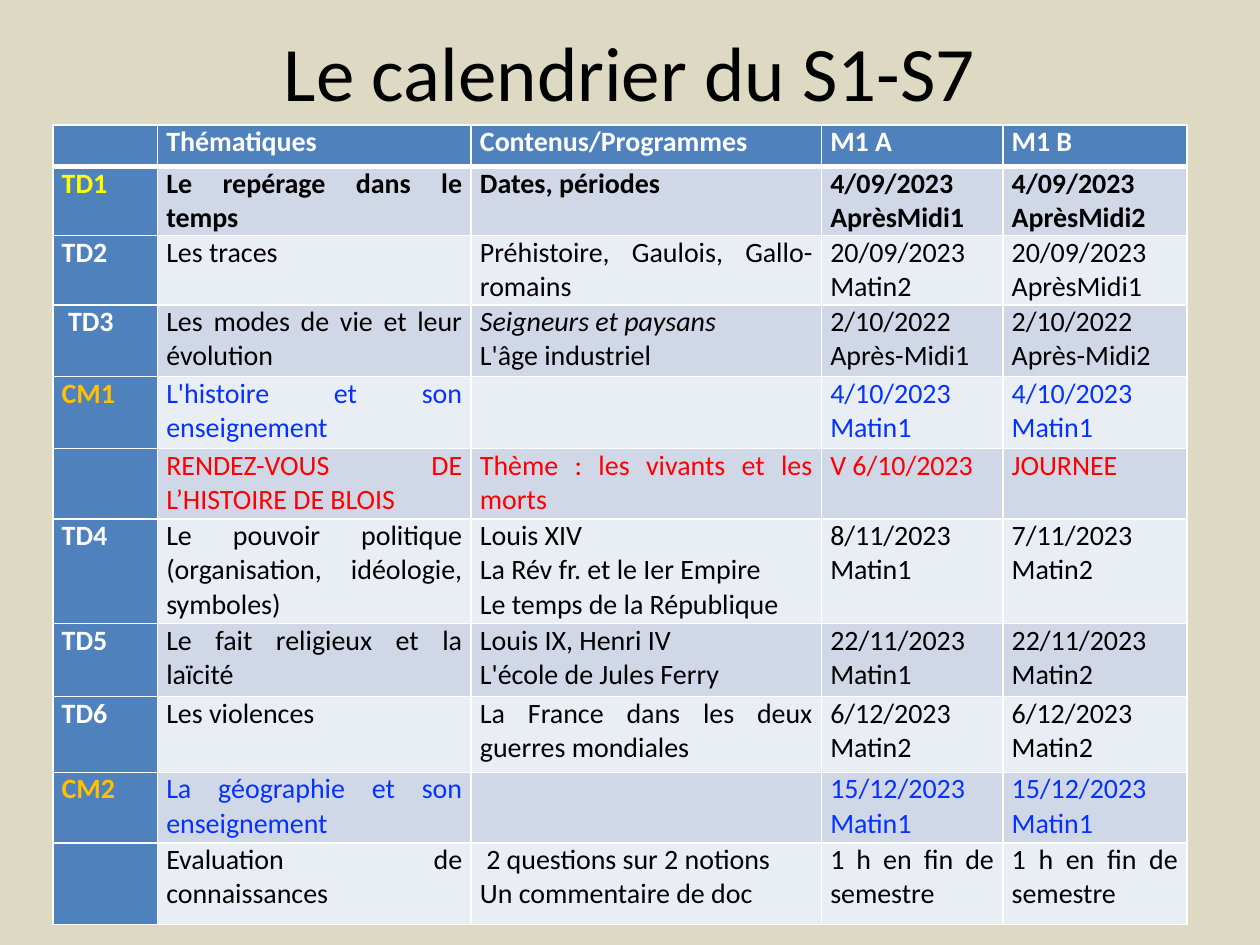
from lxml.etree import SubElement
from pptx import Presentation
from pptx.dml.color import RGBColor
from pptx.enum.text import MSO_ANCHOR, PP_ALIGN
from pptx.oxml.ns import qn
from pptx.util import Inches, Pt

FONT = "Calibri"
WHITE, BLACK, BLUE, RED = "FFFFFF", "000000", "0432FF", "FF0000"
YELLOW, ORANGE = "FFFF00", "FFC000"
HEADER_FILL, BANDS = "4F81BD", ("D0D8E8", "E9EDF4")

COLUMN_WIDTHS = (0.83, 2.49, 2.78, 1.44, 1.46)
ROW_HEIGHTS = (0.33, 0.55, 0.55, 0.57, 0.57, 0.56, 0.83, 0.58, 0.6, 0.56, 0.65)
HEADINGS = ("", "Thématiques", "Contenus/Programmes", "M1 A", "M1 B")
# Label colour, text colour, then the five cells of the row
SESSIONS = (
    (YELLOW, BLACK, "TD1", "Le repérage dans le temps", "Dates, périodes",
     "4/09/2023\nAprèsMidi1", "4/09/2023\nAprèsMidi2"),
    (WHITE, BLACK, "TD2", "Les traces", "Préhistoire, Gaulois, Gallo-romains",
     "20/09/2023\nMatin2", "20/09/2023\nAprèsMidi1"),
    (WHITE, BLACK, " TD3", "Les modes de vie et leur évolution",
     "Seigneurs et paysans\nL'âge industriel",
     "2/10/2022\nAprès-Midi1", "2/10/2022\nAprès-Midi2"),
    (ORANGE, BLUE, "CM1", "L'histoire et son enseignement", "",
     "4/10/2023\nMatin1", "4/10/2023\nMatin1"),
    (WHITE, RED, "", "RENDEZ-VOUS DE L’HISTOIRE DE BLOIS",
     "Thème : les vivants et les morts", "V 6/10/2023", "JOURNEE"),
    (WHITE, BLACK, "TD4", "Le pouvoir politique (organisation, idéologie, symboles)",
     "Louis XIV\nLa Rév fr. et le Ier Empire\nLe temps de la République",
     "8/11/2023\nMatin1", "7/11/2023\nMatin2"),
    (WHITE, BLACK, "TD5", "Le fait religieux et la laïcité",
     "Louis IX, Henri IV\nL'école de Jules Ferry",
     "22/11/2023\nMatin1", "22/11/2023\nMatin2"),
    (WHITE, BLACK, "TD6", "Les violences", "La France dans les deux guerres mondiales",
     "6/12/2023\nMatin2", "6/12/2023\nMatin2"),
    (ORANGE, BLUE, "CM2", "La géographie et son enseignement", "",
     "15/12/2023\nMatin1", "15/12/2023\nMatin1"),
    (WHITE, BLACK, "", "Evaluation de connaissances",
     " 2 questions sur 2 notions\nUn commentaire de doc",
     "1 h en fin de semestre", "1 h en fin de semestre"),
)
BOLD_SESSION = "TD1"
ITALIC_LINE = "Seigneurs et paysans"


def rgb(value):
    return RGBColor.from_string(value)


def format_paragraph(paragraph, size, color, alignment, bold=False):
    paragraph.alignment = alignment
    for run in paragraph.runs:
        font = run.font
        font.name, font.size, font.bold = FONT, Pt(size), bold
        font.italic = run.text == ITALIC_LINE
        font.color.rgb = rgb(color)
    if not paragraph.runs:
        # An empty cell keeps the text size, so its row does not grow
        SubElement(paragraph._p, qn("a:endParaRPr"), sz=str(size * 100))


def add_borders(cell, top, bottom):
    """Draw white borders; top and bottom are widths in points."""
    properties = cell._tc.get_or_add_tcPr()
    for side, width in (("L", 1), ("R", 1), ("T", top), ("B", bottom)):
        line = SubElement(properties, qn(f"a:ln{side}"), w=str(Pt(width)))
        fill = SubElement(line, qn("a:solidFill"))
        SubElement(fill, qn("a:srgbClr"), val=WHITE)


def fill_cell(cell, text, color, fill, bold, top=1, bottom=1):
    cell.margin_left = cell.margin_right = Inches(0.07)
    cell.margin_top = cell.margin_bottom = 0
    add_borders(cell, top, bottom)
    cell.fill.solid()
    cell.fill.fore_color.rgb = rgb(fill)
    cell.text_frame.text = text
    for paragraph in cell.text_frame.paragraphs:
        format_paragraph(paragraph, 16, color, PP_ALIGN.JUSTIFY, bold)


def set_title(slide, text):
    title = slide.shapes.title
    title.left, title.top = Inches(0.5), 0
    title.width, title.height = Inches(9), Inches(1.12)
    title.text_frame.text = text
    title.text_frame.vertical_anchor = MSO_ANCHOR.MIDDLE
    format_paragraph(title.text_frame.paragraphs[0], 44, BLACK, PP_ALIGN.CENTER)


def add_calendar(slide):
    table = slide.shapes.add_table(
        len(ROW_HEIGHTS), len(COLUMN_WIDTHS), Inches(0.42), Inches(0.99),
        Inches(sum(COLUMN_WIDTHS)), Inches(sum(ROW_HEIGHTS))).table
    table.first_col = True
    for column, width in zip(table.columns, COLUMN_WIDTHS):
        column.width = Inches(width)
    for row, height in zip(table.rows, ROW_HEIGHTS):
        row.height = Inches(height)

    for column, heading in enumerate(HEADINGS):
        fill_cell(table.cell(0, column), heading, WHITE, HEADER_FILL, True, bottom=3)
    for row, (label_color, text_color, *texts) in enumerate(SESSIONS, start=1):
        top = 3 if row == 1 else 1
        bold = texts[0] == BOLD_SESSION
        band = BANDS[(row - 1) % 2]
        for column, text in enumerate(texts):
            cell = table.cell(row, column)
            if column == 0:
                fill_cell(cell, text, label_color, HEADER_FILL, True, top)
            else:
                fill_cell(cell, text, text_color, band, bold, top)


def main():
    presentation = Presentation()
    presentation.slide_width, presentation.slide_height = Inches(10), Inches(7.5)
    slide = presentation.slides.add_slide(presentation.slide_layouts[5])
    slide.background.fill.solid()
    slide.background.fill.fore_color.rgb = rgb("DDD9C3")
    set_title(slide, "Le calendrier du S1-S7")
    add_calendar(slide)
    presentation.save("out.pptx")


if __name__ == "__main__":
    main()
